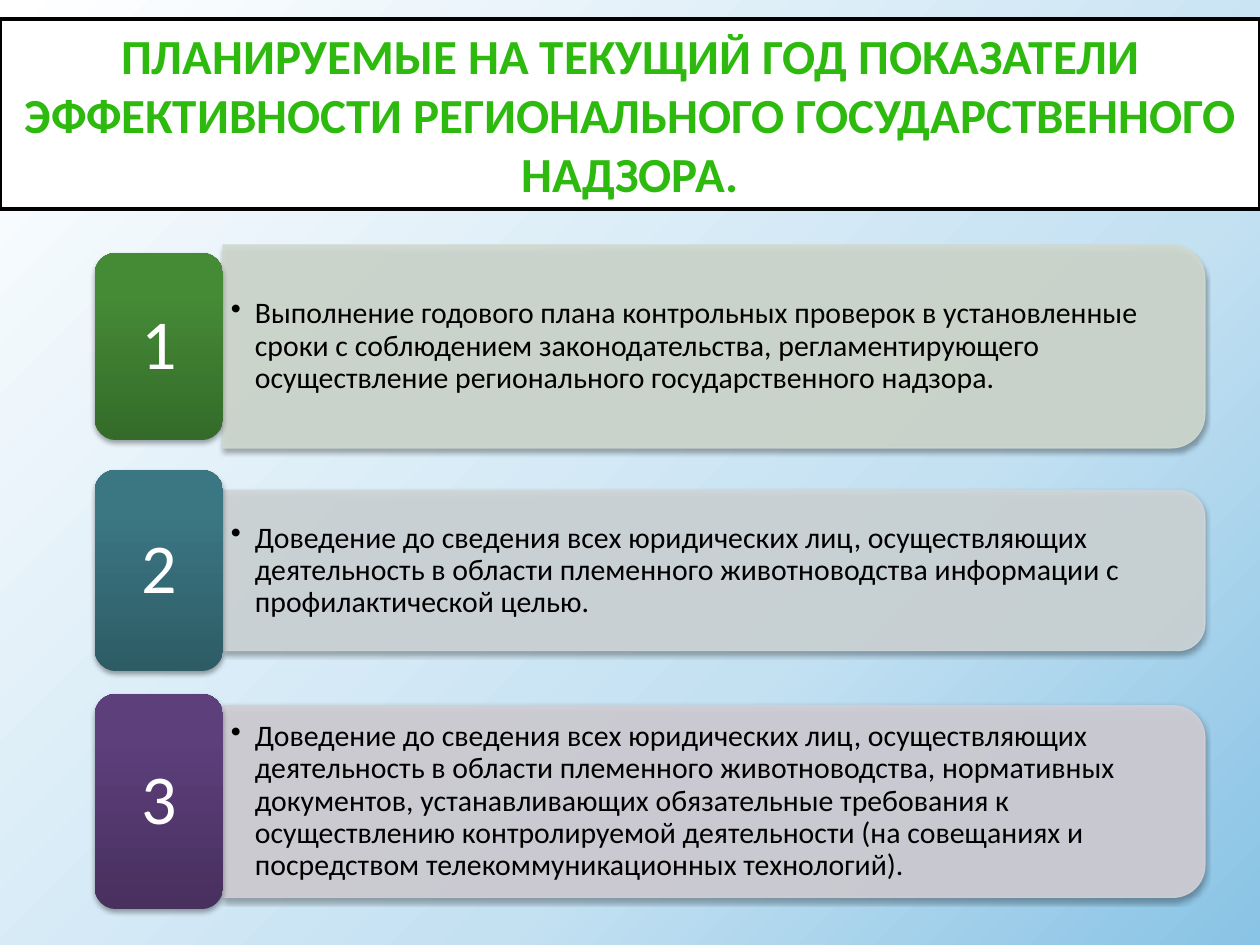
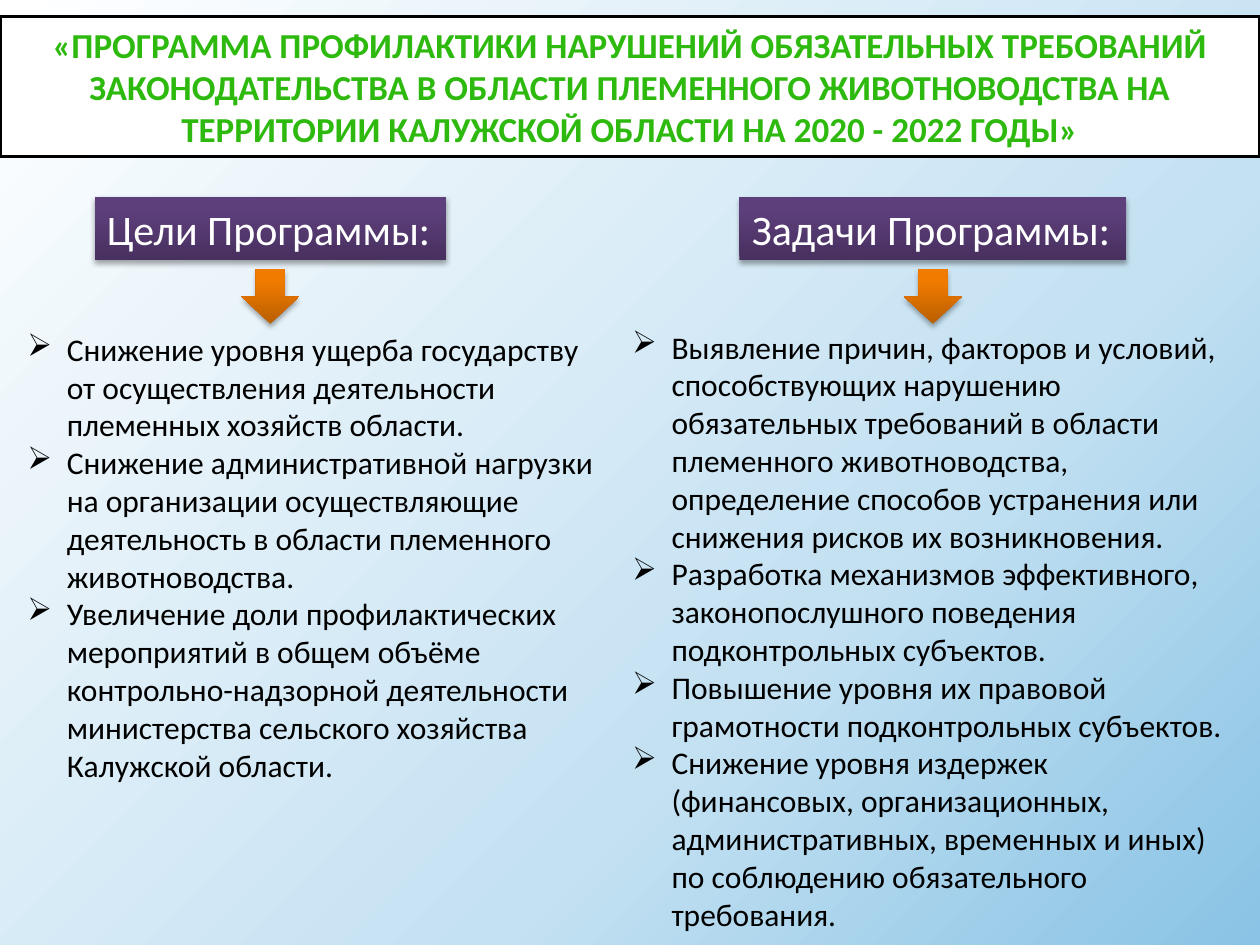
from lxml.etree import SubElement as Sub
from pptx import Presentation
from pptx.dml.color import RGBColor as RGB
from pptx.enum.shapes import MSO_SHAPE as Kind
from pptx.enum.text import MSO_ANCHOR as Anchor, PP_ALIGN as Align
from pptx.oxml.ns import qn
from pptx.util import Pt

FONT = "Calibri"
WHITE = RGB(0xFF, 0xFF, 0xFF)
BLACK = RGB(0, 0, 0)
EDGE = RGB(0x37, 0x67, 0x2C)
SKY = [(0, WHITE), (65, RGB(0xC4, 0xE1, 0xF2)), (100, RGB(0x89, 0xC3, 0xE5))]
LEAF = [(0, RGB(0x17, 0x5A, 0x09)), (43, RGB(0x2D, 0xB9, 0x0E)),
        (48, RGB(0x2A, 0xAC, 0x0D)), (100, RGB(0x17, 0x5A, 0x09))]


def glow(dark, mid, top):
    """Stops of the glossy fill that runs from dark at the foot to light."""
    return [(0, dark), (80, mid), (100, top)]


GREEN = glow(RGB(0x35, 0x6B, 0x2A), RGB(0x45, 0x8B, 0x36), RGB(0x45, 0x8D, 0x35))
TEAL = glow(RGB(0x2D, 0x5C, 0x65), RGB(0x3B, 0x77, 0x83), RGB(0x39, 0x79, 0x85))
PLUM = glow(RGB(0x48, 0x30, 0x5F), RGB(0x5D, 0x3F, 0x7B), RGB(0x5D, 0x3E, 0x7D))
AMBER = glow(RGB(0xBA, 0x5F, 0x00), RGB(0xF1, 0x7B, 0x00), RGB(0xF2, 0x7C, 0x00))
SAGE = RGB(0xD0, 0xD9, 0xCF)
MIST = RGB(0xCF, 0xD6, 0xD8)
LILAC = RGB(0xD2, 0xCF, 0xD6)

# centre line, card height, badge height, card tint, badge fill, text
GOALS = [
    (198, 116, 107, SAGE, GREEN,
     "Выполнение годового плана контрольных проверок в установленные сроки "
     "с соблюдением законодательства, регламентирующего осуществление "
     "регионального государственного надзора."),
    (326, 91.5, 115, MIST, TEAL,
     "Доведение до сведения всех юридических лиц, осуществляющих деятельность "
     "в области племенного животноводства информации с профилактической целью."),
    (458, 109.5, 123, LILAC, PLUM,
     "Доведение до сведения всех юридических лиц, осуществляющих деятельность "
     "в области племенного животноводства, нормативных документов, "
     "устанавливающих обязательные требования к осуществлению контролируемой "
     "деятельности (на совещаниях и посредством телекоммуникационных технологий)."),
]
AIMS = [
    "Снижение уровня ущерба государству от осуществления деятельности "
    "племенных хозяйств области.",
    "Снижение административной нагрузки на организации осуществляющие "
    "деятельность в области племенного животноводства.",
    "Увеличение доли профилактических мероприятий в общем объёме "
    "контрольно-надзорной деятельности министерства сельского хозяйства "
    "Калужской области.",
]
TASKS = [
    "Выявление причин, факторов и условий, способствующих нарушению "
    "обязательных требований в области племенного животноводства, определение "
    "способов устранения или снижения рисков их возникновения.",
    "Разработка механизмов эффективного, законопослушного поведения "
    "подконтрольных субъектов.",
    "Повышение уровня их правовой грамотности подконтрольных субъектов.",
    "Снижение уровня издержек (финансовых, организационных, административных, "
    "временных и иных) по соблюдению обязательного требования.",
]


def tint(owner, color, alpha=100):
    fill = Sub(owner, qn("a:srgbClr"), val=str(color))
    if alpha < 100:
        Sub(fill, qn("a:alpha"), val=str(alpha * 1000))


def blend(fill, owner, stops, angle=None):
    """Gradient fill; without an angle it spreads from the top left corner."""
    fill.gradient()
    grad = owner.find(".//" + qn("a:gradFill"))
    for child in list(grad):
        grad.remove(child)
    group = Sub(grad, qn("a:gsLst"))
    for pos, color in stops:
        tint(Sub(group, qn("a:gs"), pos=str(pos * 1000)), color)
    if angle is None:
        way = Sub(grad, qn("a:path"), {"path": "circle"})
        Sub(way, qn("a:fillToRect"), r="100000", b="100000")
    else:
        Sub(grad, qn("a:lin"), ang=str(angle * 60000), scaled="0")


def shade(shape):
    drop = Sub(shape.element.spPr.find(qn("a:effectLst")), qn("a:outerShdw"),
               blurRad=str(Pt(3.1)), dist=str(Pt(1.8)), dir="5400000", rotWithShape="0")
    tint(drop, BLACK, 35)


def add_block(slide, kind, left, top, width, height):
    shape = slide.shapes.add_shape(kind, Pt(left), Pt(top), Pt(width), Pt(height))
    shape.shadow.inherit = False
    shape.line.fill.background()
    return shape


def add_gloss(slide, kind, left, top, width, height, stops):
    shape = add_block(slide, kind, left, top, width, height)
    blend(shape.fill, shape.element.spPr, stops, 270)
    shade(shape)
    return shape


def write(shape, lines, size, color, align=Align.LEFT):
    frame = shape.text_frame
    frame.word_wrap = True
    frame.text = "\n".join(lines)
    for para in frame.paragraphs:
        para.alignment = align
        font = para.runs[0].font
        font.name, font.size = FONT, Pt(size)
        font.color.rgb = color
    return frame


def add_list(slide, left, top, width, height, lines, size, mark, indent):
    box = slide.shapes.add_textbox(Pt(left), Pt(top), Pt(width), Pt(height))
    frame = write(box, lines, size, BLACK)
    for para in frame.paragraphs:
        props = para._p.get_or_add_pPr()
        props.set("marL", str(Pt(indent)))
        props.set("indent", str(-Pt(indent)))
        Sub(props, qn("a:buChar"), char=mark)
    return frame


def add_title(slide, top, height, text, size):
    band = add_block(slide, Kind.RECTANGLE, 0, top, 720, height)
    band.fill.solid()
    band.fill.fore_color.rgb = WHITE
    band.line.color.rgb = BLACK
    band.line.width = Pt(2)
    frame = write(band, [text], size, BLACK, Align.CENTER)
    run = frame.paragraphs[0].runs[0]
    run.font.bold = True
    props = run.font._element
    blend(run.font.fill, props, LEAF, 90)
    edge = Sub(props, qn("a:ln"), w=str(Pt(0.71)))
    tint(Sub(edge, qn("a:solidFill")), EDGE)
    props.insert(0, edge)


def add_card(slide, left, mid, width, height, color):
    """Panel with rounded right corners: a shape turned by a quarter."""
    card = add_block(slide, Kind.ROUND_2_SAME_RECTANGLE, left + (width - height) / 2,
                     mid - width / 2, height, width)
    card.rotation = 90
    card.fill.solid()
    card.fill.fore_color.rgb = color
    card.line.color.rgb = color
    card.line.width = Pt(0.75)
    for paint in card.element.spPr.iter(qn("a:srgbClr")):
        Sub(paint, qn("a:alpha"), val="90000")
    shade(card)


def add_goal(slide, num, mid, high, tall, color, stops, text):
    add_card(slide, 127.5, mid, 561, high, color)
    frame = add_list(slide, 127, mid - high / 2 + 5, 556, high - 10,
                     [text], 17, "•", 13.7)
    frame.vertical_anchor = Anchor.MIDDLE
    frame.margin_left = frame.margin_right = Pt(5)
    frame.margin_top = frame.margin_bottom = Pt(3)
    frame.paragraphs[0].line_spacing = 0.9
    badge = add_gloss(slide, Kind.ROUNDED_RECTANGLE, 54, mid - tall / 2, 73.5, tall, stops)
    frame = write(badge, [str(num)], 40, WHITE, Align.CENTER)
    frame.paragraphs[0].line_spacing = 0.9


def add_head(slide, left, width, text):
    """Heading plate with an arrow below its middle."""
    plate = add_gloss(slide, Kind.RECTANGLE, left, 112.5, width, 36, PLUM)
    write(plate, [text], 24, WHITE).word_wrap = False
    add_gloss(slide, Kind.DOWN_ARROW, left + width / 2 - 16.5, 154, 33, 31, AMBER)


def main():
    deck = Presentation()
    deck.slide_width, deck.slide_height = Pt(720), Pt(540)
    master = deck.slide_master
    blend(master.background.fill, master.element.find(".//" + qn("p:bgPr")), SKY)
    blank = deck.slide_layouts[6]

    slide = deck.slides.add_slide(blank)
    add_title(slide, 10.8, 108.7, "ПЛАНИРУЕМЫЕ НА ТЕКУЩИЙ ГОД ПОКАЗАТЕЛИ ЭФФЕКТИВНОСТИ "
              "РЕГИОНАЛЬНОГО ГОСУДАРСТВЕННОГО НАДЗОРА.", 28)
    for num, goal in enumerate(GOALS, 1):
        add_goal(slide, num, *goal)

    slide = deck.slides.add_slide(blank)
    add_title(slide, 9.4, 80, "«ПРОГРАММА ПРОФИЛАКТИКИ НАРУШЕНИЙ ОБЯЗАТЕЛЬНЫХ ТРЕБОВАНИЙ "
              "ЗАКОНОДАТЕЛЬСТВА В ОБЛАСТИ ПЛЕМЕННОГО ЖИВОТНОВОДСТВА НА ТЕРРИТОРИИ "
              "КАЛУЖСКОЙ ОБЛАСТИ НА 2020 - 2022 ГОДЫ»", 20)
    add_list(slide, 8.6, 185, 345.6, 269, AIMS, 18, "➢", 22.5)
    add_list(slide, 354.2, 183.6, 360, 356, TASKS, 18, "➢", 22.5)
    add_head(slide, 54, 201, "Цели Программы:")
    add_head(slide, 422.6, 221, "Задачи Программы:")

    deck.save("out.pptx")


if __name__ == "__main__":
    main()
